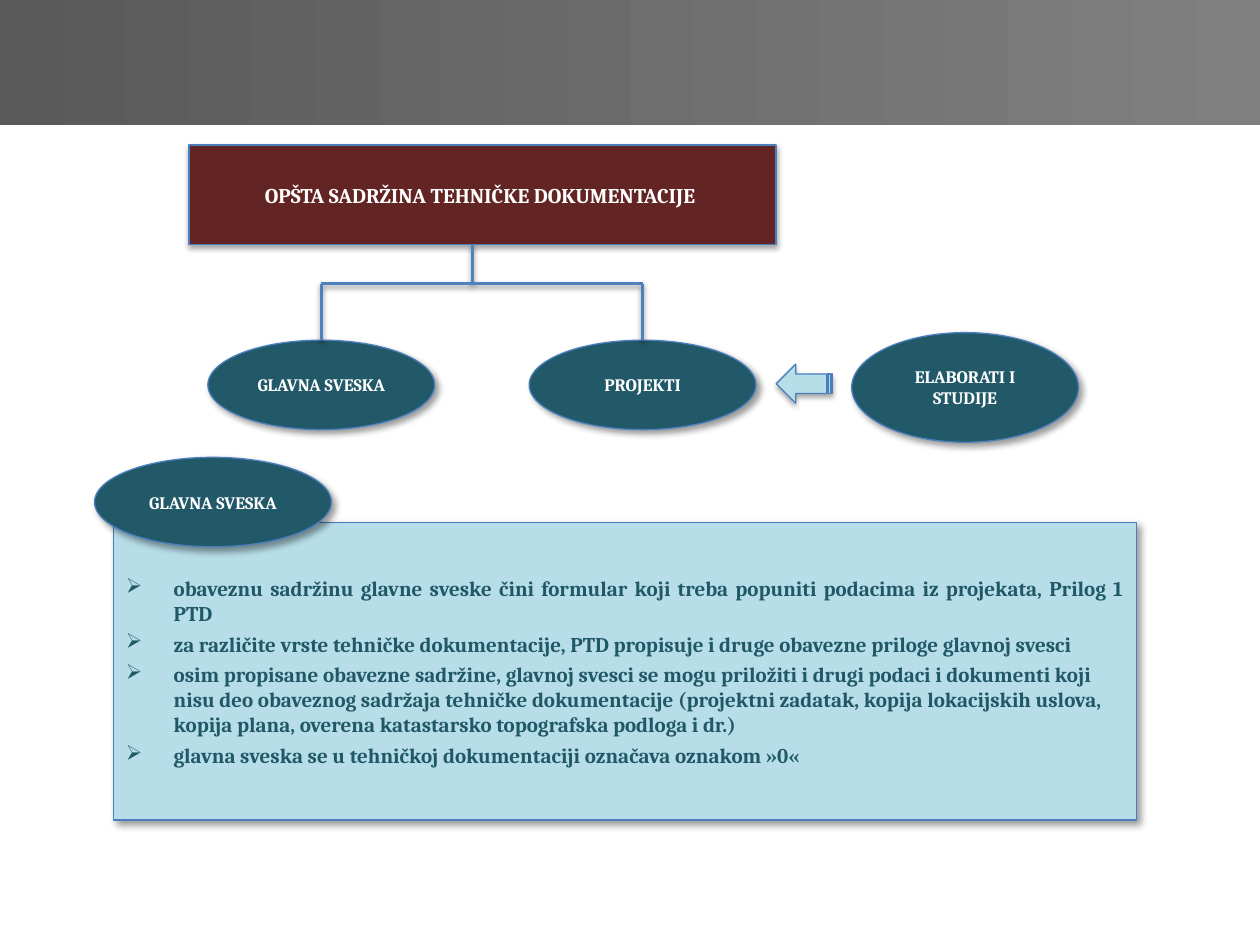
from lxml.etree import SubElement
from pptx import Presentation
from pptx.dml.color import RGBColor
from pptx.enum.shapes import MSO_CONNECTOR, MSO_SHAPE
from pptx.enum.text import MSO_ANCHOR, PP_ALIGN
from pptx.oxml.ns import qn
from pptx.util import Inches, Pt

COLORS = {
    "band_start": "595959", "band_end": "808080", "title": "632523",
    "panel": "B7DEE8", "oval": "215968", "outline": "4B7EBC",
    "link": "4F81BD", "white": "FFFFFF", "body": "215868", "shadow": "000000",
}
SOFT = {"alpha": 35, "blur": 3.1, "dist": 1.8, "angle": 90}
DEEP = {"alpha": 40, "blur": 4, "dist": 3, "angle": 45}
LINK = {"alpha": 38, "blur": 3.1, "dist": 1.6, "angle": 90}


class DiagramSlide:
    """Draw the documentation diagram in one consistent style."""

    def __init__(self, slide):
        self.slide = slide
        self.font = {"name": "Cambria", "bold": True}

    def color(self, name):
        return RGBColor.from_string(COLORS[name])

    def band(self, height):
        band = self.slide.shapes.add_shape(
            MSO_SHAPE.RECTANGLE, 0, 0, Inches(10), Inches(height))
        band.shadow.inherit = False
        band.line.fill.background()
        band.fill.gradient()
        band.fill.gradient_angle = 0
        for stop, name in zip(band.fill.gradient_stops, ("band_start", "band_end")):
            stop.color.rgb = self.color(name)

    def cast_shadow(self, effects, shadow):
        outer = SubElement(
            effects, qn("a:outerShdw"), blurRad=str(Pt(shadow["blur"])),
            dist=str(Pt(shadow["dist"])), dir=str(shadow["angle"] * 60000),
            algn="t", rotWithShape="0")
        tint = SubElement(outer, qn("a:srgbClr"), val=COLORS["shadow"])
        SubElement(tint, qn("a:alpha"), val=str(shadow["alpha"] * 1000))

    def block(self, kind, box, fill, shadow):
        block = self.slide.shapes.add_shape(kind, *map(Inches, box))
        block.fill.solid()
        block.fill.fore_color.rgb = self.color(fill)
        block.line.color.rgb = self.color("outline")
        block.line.width = Pt(0.75)
        block.shadow.inherit = False
        self.cast_shadow(block._element.spPr.find(qn("a:effectLst")), shadow)
        block.text_frame.word_wrap = True
        block.text_frame.vertical_anchor = MSO_ANCHOR.MIDDLE
        return block

    def set_text(self, paragraph, text, size, color, **layout):
        paragraph.text = text
        for key, value in layout.items():
            setattr(paragraph, key, value)
        for key, value in {**self.font, "size": Pt(size)}.items():
            setattr(paragraph.font, key, value)
        paragraph.font.color.rgb = self.color(color)

    def label(self, kind, box, text, fill="oval", shadow=DEEP, size=10):
        label = self.block(kind, box, fill, shadow)
        self.set_text(label.text_frame.paragraphs[0], text, size, "white",
                      alignment=PP_ALIGN.CENTER)
        return label

    def bullets(self, box, items):
        frame = self.block(MSO_SHAPE.RECTANGLE, box, "panel", DEEP).text_frame
        for index, (text, alignment) in enumerate(items):
            paragraph = frame.add_paragraph() if index else frame.paragraphs[0]
            properties = paragraph._p.get_or_add_pPr()
            properties.set("marL", str(Inches(0.38)))
            properties.set("indent", str(Inches(-0.38)))
            SubElement(properties, qn("a:buChar"), char="➢")
            self.set_text(paragraph, text, 12, "body", alignment=alignment,
                          space_before=Pt(3 if index else 0))

    def link(self, start, end, target=None):
        link = self.slide.shapes.add_connector(
            MSO_CONNECTOR.STRAIGHT, *map(Inches, start + end))
        link.line.color.rgb = self.color("link")
        link.line.width = Pt(2)
        effects = SubElement(link._element.spPr, qn("a:effectLst"))
        self.cast_shadow(effects, LINK)
        if target is not None:
            link.end_connect(target, 0)

    def arrow(self, box):
        self.block(MSO_SHAPE.STRIPED_RIGHT_ARROW, box, "panel", SOFT).rotation = 180


def main():
    deck = Presentation()
    deck.slide_width, deck.slide_height = Inches(10), Inches(7.5)
    diagram = DiagramSlide(deck.slides.add_slide(deck.slide_layouts[6]))

    diagram.band(0.99)
    diagram.label(MSO_SHAPE.RECTANGLE, (1.5, 1.15, 4.66, 0.79),
                  "OPŠTA SADRŽINA TEHNIČKE DOKUMENTACIJE ", "title", SOFT, 12)
    diagram.bullets((0.9, 4.15, 8.12, 2.36), [
        ("obaveznu sadržinu glavne sveske čini formular koji treba popuniti "
         "podacima iz projekata, Prilog 1 PTD", PP_ALIGN.JUSTIFY),
        ("za različite vrste tehničke dokumentacije, PTD propisuje i druge "
         "obavezne priloge glavnoj svesci ", PP_ALIGN.JUSTIFY),
        ("osim propisane obavezne sadržine, glavnoj svesci se mogu priložiti i "
         "drugi podaci i dokumenti koji nisu deo obaveznog sadržaja tehničke "
         "dokumentacije (projektni zadatak, kopija lokacijskih uslova, kopija "
         "plana, overena katastarsko topografska podloga i dr.)", PP_ALIGN.LEFT),
        ("glavna sveska se u tehničkoj dokumentaciji označava oznakom »0«",
         PP_ALIGN.LEFT),
    ])
    diagram.label(MSO_SHAPE.OVAL, (0.75, 3.63, 1.88, 0.71), "GLAVNA SVESKA")
    main_volume, projects, _ = [
        diagram.label(MSO_SHAPE.OVAL, (left, top, 1.8, height), text)
        for left, top, height, text in (
            (1.65, 2.7, 0.71, "GLAVNA SVESKA"),
            (4.2, 2.7, 0.71, "PROJEKTI"),
            (6.76, 2.64, 0.87, "ELABORATI I STUDIJE"))
    ]

    trunk, branch = 3.75, 2.25
    diagram.link((trunk, 1.94), (trunk, branch))
    diagram.link((2.55, branch), (5.1, branch))
    for center, volume in ((2.55, main_volume), (5.1, projects)):
        diagram.link((center, branch), (center, 2.7), volume)
    diagram.arrow((6.16, 2.89, 0.45, 0.31))

    deck.save("out.pptx")


if __name__ == "__main__":
    main()
